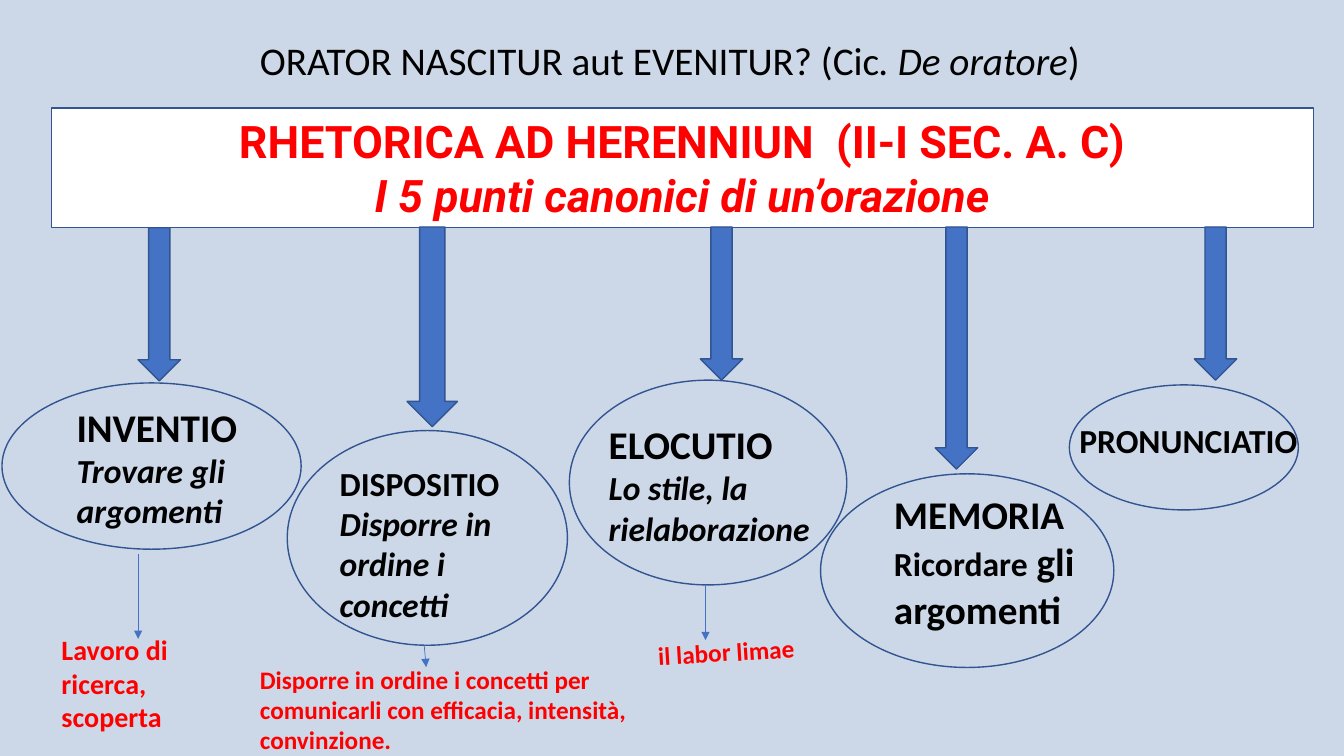
"""Build the slide on the five canonical parts of a speech."""
from lxml.etree import SubElement
from pptx import Presentation
from pptx.dml.color import RGBColor
from pptx.enum.shapes import MSO_CONNECTOR, MSO_SHAPE
from pptx.enum.text import MSO_ANCHOR, PP_ALIGN
from pptx.oxml.ns import qn
from pptx.util import Cm, Pt

COLORS = {
    "background": "CCD8E7",
    "banner": "FFFFFF",
    "arrow": "4472C4",
    "outline": "325491",
    "text": "000000",
    "accent": "FF0000",
}


def color(name):
    return RGBColor.from_string(COLORS[name])


def write(frame, paragraphs, size=24, font="Calibri", ink="text", bold=True,
          align=PP_ALIGN.LEFT, anchor=MSO_ANCHOR.TOP):
    frame.word_wrap = True
    frame.vertical_anchor = anchor
    for index, runs in enumerate(paragraphs):
        paragraph = frame.paragraphs[0] if index == 0 else frame.add_paragraph()
        paragraph.alignment = align
        for words, style in runs:
            run = paragraph.add_run()
            run.text = words
            run.font.name = font
            run.font.size = Pt(style.get("size", size))
            run.font.bold = bold
            run.font.italic = style.get("italic", False)
            run.font.color.rgb = color(ink)


class Board:
    def __init__(self, slide):
        self.slide = slide
        slide.background.fill.solid()
        slide.background.fill.fore_color.rgb = color("background")

    def shape(self, kind, box, fill=None):
        drawn = self.slide.shapes.add_shape(kind, *map(Cm, box))
        drawn.shadow.inherit = False
        if fill:
            drawn.fill.solid()
            drawn.fill.fore_color.rgb = color(fill)
        else:
            drawn.fill.background()
        drawn.line.color.rgb = color("outline")
        drawn.line.width = Pt(1)
        return drawn

    def text(self, box, paragraphs, rotation=0, **style):
        label = self.slide.shapes.add_textbox(*map(Cm, box))
        label.rotation = rotation
        write(label.text_frame, paragraphs, **style)

    def pointer(self, start, end):
        line = self.slide.shapes.add_connector(
            MSO_CONNECTOR.STRAIGHT, *map(Cm, start + end))
        line.line.color.rgb = color("arrow")
        line.line.width = Pt(0.5)
        SubElement(line.line._get_or_add_ln(), qn("a:tailEnd"), type="triangle")
        SubElement(line._element.spPr, qn("a:effectLst"))


ITALIC = {"italic": True}
LARGE = {"size": 28}

PARTS = [
    {"arrow": (3.48, 5.74, 1.07, 3.86), "oval": (0.05, 9.65, 7.54, 4.19),
     "label": (1.68, 10.03, 6.07, 3.51),
     "words": [[("INVENTIO", LARGE)], [("Trovare gli argomenti", ITALIC)]]},
    {"arrow": (10.26, 5.72, 1.27, 5.03), "oval": (7.24, 10.85, 7.06, 5.41),
     "label": (8.31, 11.53, 5.56, 4.37),
     "words": [[("DISPOSITIO", {})], [("Disporre in ordine i concetti", ITALIC)]]},
    {"arrow": (17.65, 5.72, 1.07, 3.86), "oval": (14.35, 9.58, 6.99, 5.16),
     "label": (15.09, 10.46, 6.43, 3.51),
     "words": [[("ELOCUTIO", LARGE)], [("Lo stile, la", ITALIC)],
               [("rielaborazione", ITALIC)]]},
    {"arrow": (23.57, 5.72, 1.07, 6.1), "oval": (20.68, 11.94, 7.39, 4.88),
     "label": (22.28, 12.24, 8.2, 3.84),
     "words": [[("MEMORIA", LARGE)], [("Ricordare", {}), (" gli", LARGE)],
               [("argomenti", LARGE)]]},
    {"arrow": (30.1, 5.72, 1.07, 3.86), "oval": (26.95, 9.7, 5.77, 3.15),
     "label": (26.95, 10.46, 6.9, 1.27),
     "words": [[("PRONUNCIATIO", {})]]},
]

NOTES = [
    ((3.48, 13.97), (3.48, 16.1), (1.3, 15.82, 5, 2.82), 20, 0,
     "Lavoro di ricerca, scoperta"),
    ((10.69, 16.26), (10.74, 16.81), (6.3, 16.61, 9.93, 2.44), 18, 0,
     "Disporre in ordine i concetti per comunicarli con efficacia, "
     "intensità, convinzione."),
    ((17.78, 14.76), (17.78, 16.13), (16.33, 15.9, 4.34, 1.02), 18, -3.6,
     "il labor limae"),
]


def main():
    deck = Presentation()
    deck.slide_width, deck.slide_height = Cm(33.87), Cm(19.05)
    board = Board(deck.slides.add_slide(deck.slide_layouts[6]))

    board.text((6.3, 0.79, 25.43, 1.45),
               [[("ORATOR NASCITUR aut EVENITUR? (Cic", {}),
                 (". De oratore", ITALIC), (")", {})]],
               size=28, bold=False)
    banner = board.shape(MSO_SHAPE.RECTANGLE, (1.3, 2.72, 31.8, 3.02), "banner")
    write(banner.text_frame,
          [[("RHETORICA AD HERENNIUN  (II-I SEC. A. C)", {})],
           [("I 5 punti canonici di un’orazione", ITALIC)]],
          size=32, font="Roboto", ink="accent",
          align=PP_ALIGN.CENTER, anchor=MSO_ANCHOR.MIDDLE)

    for part in PARTS:
        board.shape(MSO_SHAPE.DOWN_ARROW, part["arrow"], "arrow")
        board.shape(MSO_SHAPE.OVAL, part["oval"])
        board.text(part["label"], part["words"])

    for start, end, box, size, rotation, words in NOTES:
        board.pointer(start, end)
        board.text(box, [[(words, {})]], rotation, size=size, ink="accent")

    deck.save("out.pptx")


if __name__ == "__main__":
    main()
